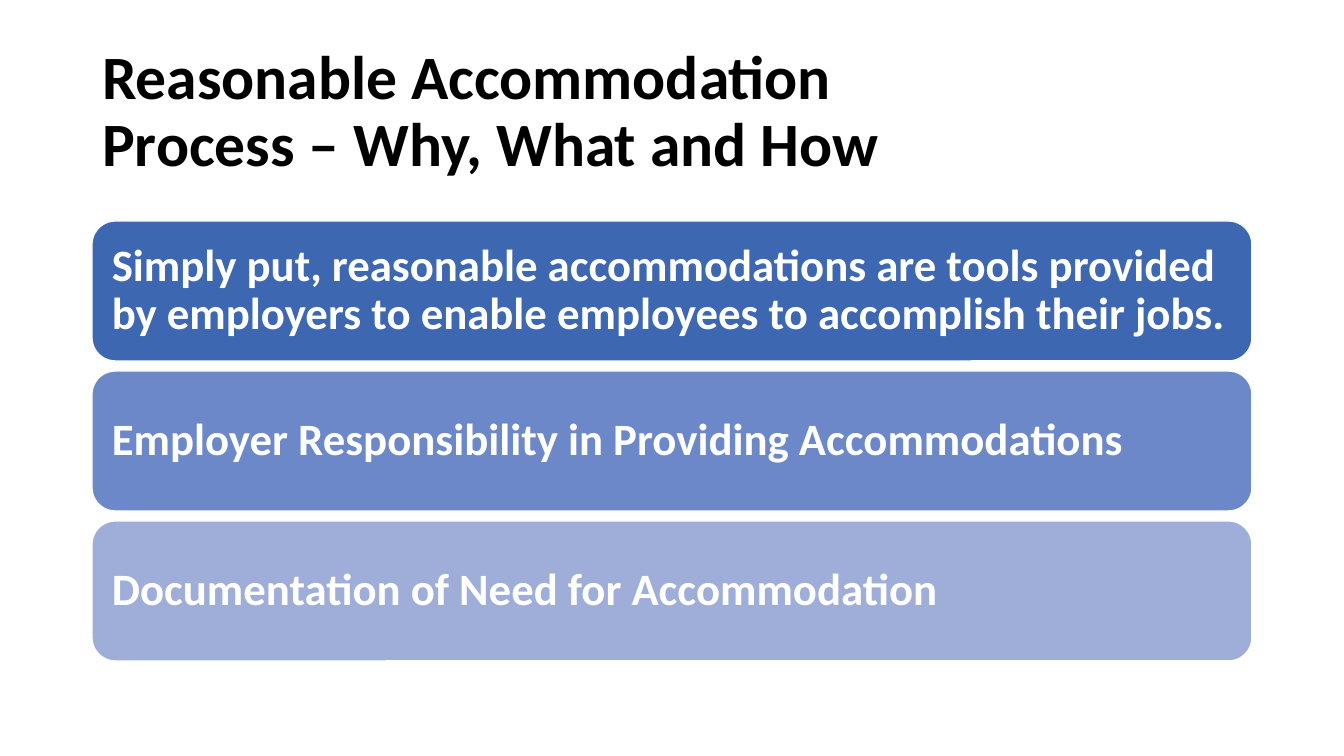
"""Build the slide on the reasonable accommodation process."""
from pptx import Presentation
from pptx.dml.color import RGBColor
from pptx.enum.shapes import MSO_SHAPE
from pptx.enum.text import MSO_ANCHOR, PP_ALIGN
from pptx.util import Pt

PX = 914400 / 100.8
THEME = {
    "font": "Calibri",
    "title_size": 44,
    "bar_size": 32,
    "title": "000000",
    "bar_text": "FFFFFF",
    "outline": "FFFFFF",
    "bars": ["3E67B2", "6C88C8", "9FAED8"],
}
BARS = [
    "Simply put, reasonable accommodations are tools provided by employers "
    "to enable employees to accomplish their jobs.",
    "Employer Responsibility in Providing Accommodations",
    "Documentation of Need for Accommodation",
]
LEFT, WIDTH = 92, 1160
BAR_TOP, BAR_HEIGHT, BAR_PITCH, BAR_INSET = 221, 140, 150, 13


def px(n):
    return round(n * PX)


def style(p, size, color):
    p.alignment = PP_ALIGN.LEFT
    p.line_spacing = 0.9
    p.font.name = THEME["font"]
    p.font.size = Pt(size)
    p.font.bold = True
    p.font.color.rgb = RGBColor.from_string(color)


prs = Presentation()
prs.slide_width, prs.slide_height = px(1344), px(756)
s = prs.slides.add_slide(prs.slide_layouts[5])

title = s.shapes.title
title.left, title.top, title.width, title.height = px(LEFT), px(40), px(WIDTH), px(146)
tf = title.text_frame
tf.text = "Reasonable Accommodation\vProcess – Why, What and How"
tf.vertical_anchor = MSO_ANCHOR.MIDDLE
style(tf.paragraphs[0], THEME["title_size"], THEME["title"])

for i, (text, fill) in enumerate(zip(BARS, THEME["bars"])):
    sp = s.shapes.add_shape(MSO_SHAPE.ROUNDED_RECTANGLE, px(LEFT),
                            px(BAR_TOP + i * BAR_PITCH), px(WIDTH), px(BAR_HEIGHT))
    sp.shadow.inherit = False
    sp.fill.solid()
    sp.fill.fore_color.rgb = RGBColor.from_string(fill)
    sp.line.color.rgb = RGBColor.from_string(THEME["outline"])
    sp.line.width = Pt(1)
    tf = sp.text_frame
    tf.text = text
    tf.word_wrap = True
    tf.vertical_anchor = MSO_ANCHOR.MIDDLE
    tf.margin_left = tf.margin_right = tf.margin_top = tf.margin_bottom = px(BAR_INSET)
    style(tf.paragraphs[0], THEME["bar_size"], THEME["bar_text"])

prs.save("out.pptx")
